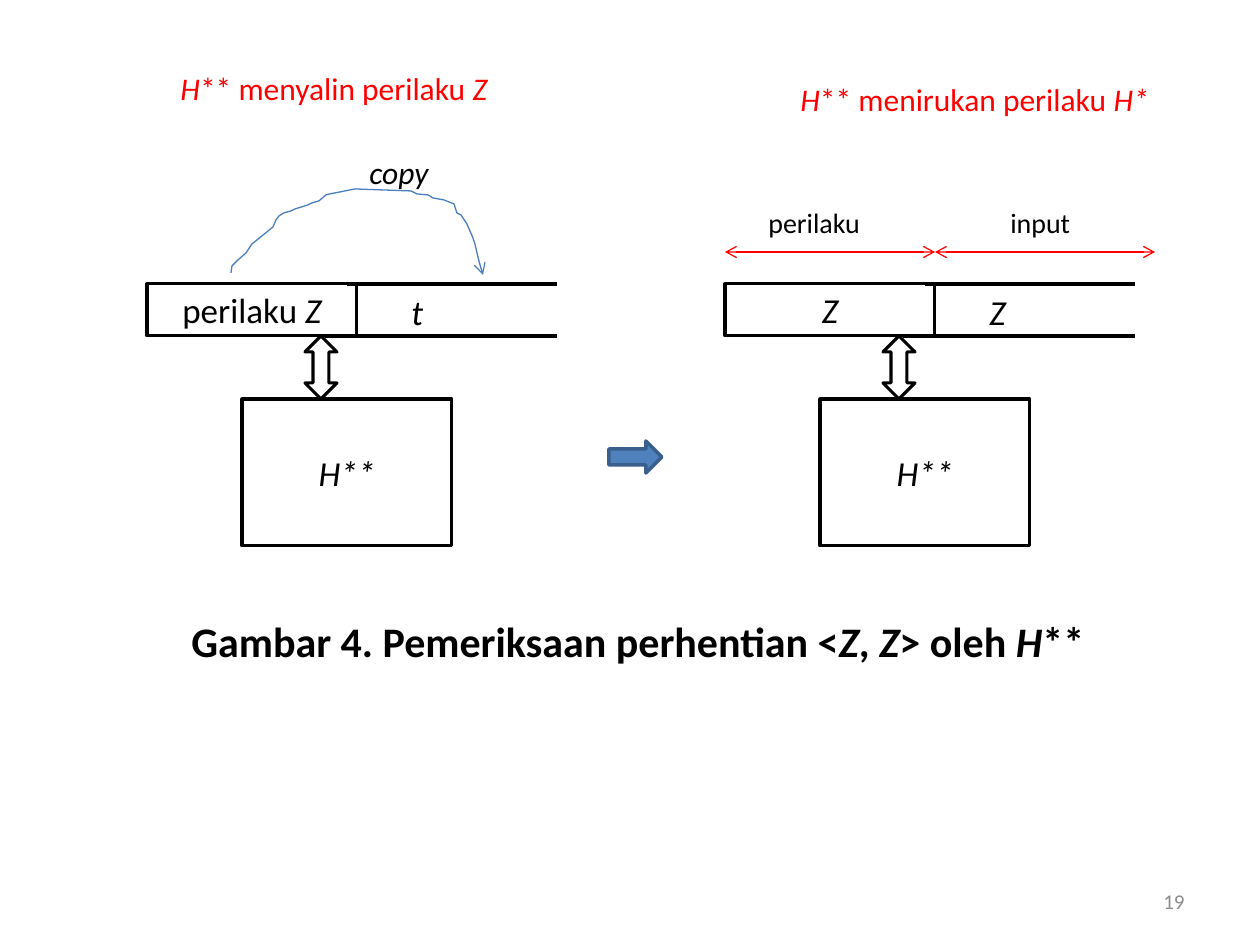
from lxml.etree import SubElement
from pptx import Presentation
from pptx.dml.color import RGBColor as Rgb
from pptx.enum.shapes import MSO_CONNECTOR as Conn, MSO_SHAPE as Shp
from pptx.enum.text import MSO_ANCHOR as Anc, MSO_AUTO_SIZE as Fit, PP_ALIGN as Al
from pptx.oxml.ns import qn
from pptx.util import Emu, Pt

SCALE = 914400 / 126
HEX = {"black": "000000", "red": "FF0000", "blue": "4F81BD",
       "edge": "3A5F8C", "curve": "4B7EBC", "gray": "8C8C8C"}
ARC = [(231, 273), (232, 266), (238, 260), (246, 253), (252, 244), (257, 240),
       (273, 227), (276, 220), (279, 216), (284, 213), (291, 211), (295, 209),
       (308, 205), (312, 203), (319, 201), (326, 195), (330, 194), (355, 189),
       (411, 191), (417, 194), (428, 195), (433, 198), (444, 200), (454, 204),
       (457, 213), (461, 215), (467, 224), (473, 238), (475, 244), (478, 257),
       (480, 265), (481, 271), (483, 275)]


def px(*nums):
    return [Emu(round(n * SCALE)) for n in nums]


def tint(name):
    return Rgb.from_string(HEX[name])


def write(shape, text, size, color="black", align=Al.LEFT, bold=False):
    """Fill the shape with text, in which _ turns italics on and off."""
    para = shape.text_frame.paragraphs[0]
    para.alignment = align
    for i, part in enumerate(text.split("_")):
        if part:
            run = para.add_run()
            run.text = part
            look = {"name": "Calibri", "size": Pt(size), "bold": bold, "italic": i % 2 == 1}
            for key, val in look.items():
                setattr(run.font, key, val)
            run.font.color.rgb = tint(color)


def label(slide, at, text, size, color="black", align=Al.LEFT, bold=False,
          wrap=False, fit=Fit.SHAPE_TO_FIT_TEXT, anchor=Anc.TOP):
    box = slide.shapes.add_textbox(*px(*at))
    form = {"word_wrap": wrap, "auto_size": fit, "vertical_anchor": anchor}
    for key, val in form.items():
        setattr(box.text_frame, key, val)
    write(box, text, size, color, align, bold)


def paint(shape, color, width, fill=None):
    shape.shadow.inherit = False
    if fill:
        shape.fill.solid()
        shape.fill.fore_color.rgb = tint(fill)
    else:
        shape.fill.background()
    shape.line.color.rgb = tint(color)
    shape.line.width = Pt(width)


def block(slide, kind, at, text="", color="black", width=1.75, fill=None):
    shape = slide.shapes.add_shape(kind, *px(*at))
    paint(shape, color, width, fill)
    if text:
        shape.text_frame.word_wrap = True
        shape.text_frame.vertical_anchor = Anc.MIDDLE
        write(shape, text, 20, align=Al.CENTER)


def tip(shape, *ends):
    line = shape.line._get_or_add_ln()
    for end in ends:
        SubElement(line, qn(f"a:{end}"), type="arrow")


def rule(slide, ends, width=1.75, color="black", tips=()):
    line = slide.shapes.add_connector(Conn.STRAIGHT, *px(*ends))
    line.line.color.rgb = tint(color)
    line.line.width = Pt(width)
    tip(line, *tips)
    SubElement(line._element.spPr, qn("a:effectLst"))


def tape(slide, x, first, second):
    """Draw a machine with its two-part tape, starting at x."""
    top, low, end = 284, 336, x + 410
    block(slide, Shp.RECTANGLE, (x, top, 210, low - top), first)
    rule(slide, (x + 178, low, end, low))
    rule(slide, (x + 200, top, end, top))
    rule(slide, (x + 210, top, x + 210, low), 0.75)
    label(slide, (x + 252, top, 117, 55), second, 20, wrap=True)
    block(slide, Shp.RECTANGLE, (x + 95, 399, 210, 147), "_H**_")
    block(slide, Shp.UP_DOWN_ARROW, (x + 158, low, 32, 63))


def curve(slide):
    (x, y), *rest = ARC
    pen = slide.shapes.build_freeform(x, y, scale=SCALE)
    pen.add_line_segments(rest, close=False)
    shape = pen.convert_to_shape()
    paint(shape, "curve", 0.75)
    tip(shape, "tailEnd")


def main():
    deck = Presentation()
    deck.slide_width, deck.slide_height = px(1260, 945)
    slide = deck.slides.add_slide(deck.slide_layouts[6])

    label(slide, (903, 876, 294, 50), "19", 12, "gray", Al.RIGHT,
          wrap=True, fit=Fit.NONE, anchor=Anc.MIDDLE)
    tape(slide, 147, "perilaku_ Z_", "_t_")
    tape(slide, 725, "_Z_", "_Z_")
    block(slide, Shp.RIGHT_ARROW, (609, 441, 53, 32), color="edge", width=2, fill="blue")
    curve(slide)
    label(slide, (357, 147, 87, 50), "_copy_", 18)
    for left, right in ((725, 935), (935, 1155)):
        rule(slide, (left, 252, right, 252), 0.75, "red", ("headEnd", "tailEnd"))
    label(slide, (756, 199, 118, 47), "perilaku", 16)
    label(slide, (998, 199, 86, 47), "input", 16)
    label(slide, (179, 609, 949, 63),
          "Gambar 4. Pemeriksaan perhentian <_Z_, _Z_> oleh _H_**", 24, bold=True)
    label(slide, (168, 63, 336, 50), "_H_** menyalin perilaku _Z_", 18, "red")
    label(slide, (788, 74, 378, 50), "_H_** menirukan perilaku _H*_", 18, "red")
    deck.save("out.pptx")


if __name__ == "__main__":
    main()
